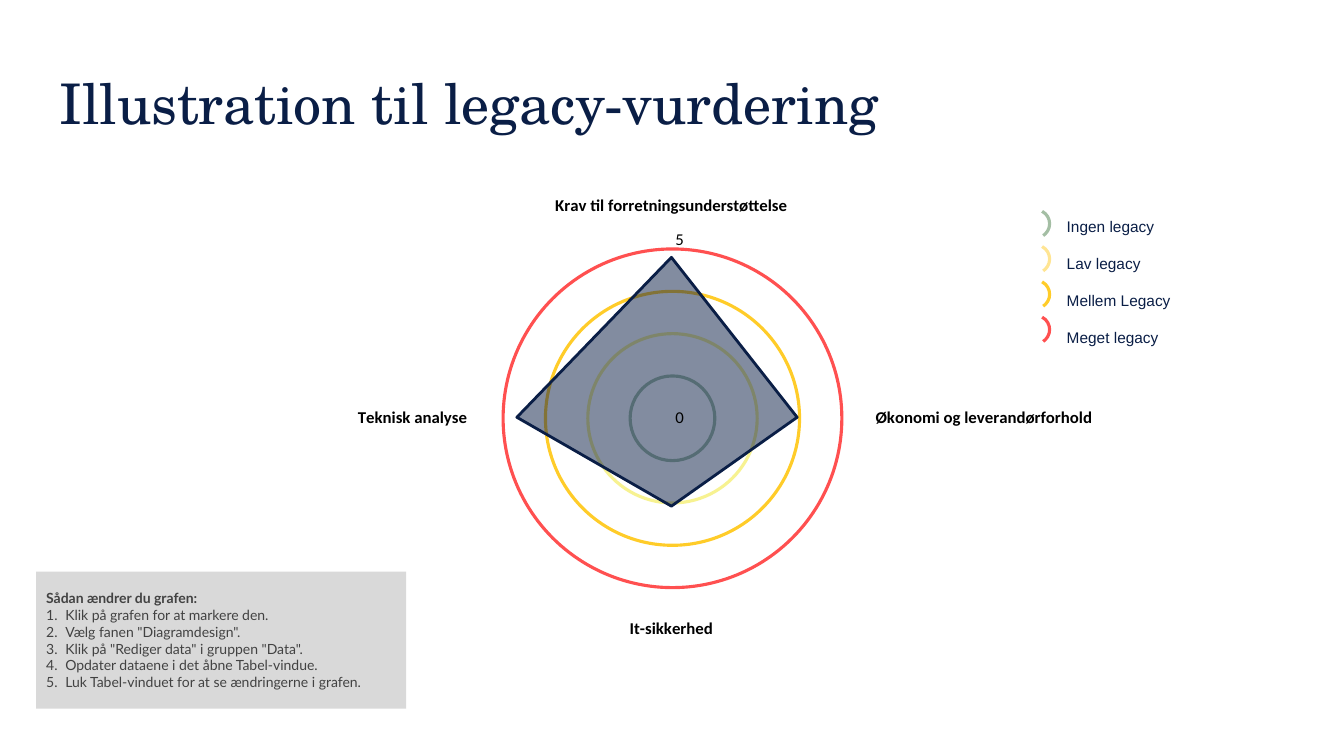
from dataclasses import dataclass

from lxml.etree import SubElement
from pptx import Presentation
from pptx.chart.data import CategoryChartData
from pptx.dml.color import RGBColor
from pptx.enum.chart import XL_CHART_TYPE, XL_TICK_MARK
from pptx.enum.shapes import MSO_SHAPE
from pptx.enum.text import MSO_ANCHOR, MSO_AUTO_SIZE, PP_ALIGN
from pptx.oxml import parse_xml
from pptx.oxml.ns import nsdecls, qn
from pptx.util import Inches, Pt

NAVY = RGBColor(0x0A, 0x1E, 0x46)
RED = RGBColor(0xFF, 0x50, 0x50)
AMBER = RGBColor(0xFF, 0xCC, 0x29)
SAND = RGBColor(0xFF, 0xE5, 0x93)
LEMON = RGBColor(0xF7, 0xF2, 0x91)
SAGE = RGBColor(0xA4, 0xBE, 0xA4)
SILVER = RGBColor(0xD9, 0xD9, 0xD9)
GRAY = RGBColor(0x42, 0x42, 0x42)
BLACK = RGBColor(0, 0, 0)
WHITE = RGBColor(0xFF, 0xFF, 0xFF)

MID_X, MID_Y = 6.67, 4.15
RING_STEP = 0.42  # radius added by each level


@dataclass
class Level:
    name: str
    ring: RGBColor
    arc: RGBColor


@dataclass
class Score:
    topic: str
    value: float


LEVELS = [
    Level("Ingen legacy", SAGE, SAGE),
    Level("Lav legacy", LEMON, SAND),
    Level("Mellem Legacy", AMBER, AMBER),
    Level("Meget legacy", RED, RED),
]
SCORES = [
    Score("Krav til forretningsunderstøttelse", 4.5),
    Score("Økonomi og leverandørforhold", 3.5),
    Score("It-sikkerhed", 2.5),
    Score("Teknisk analyse", 4.3),
]
STEPS = [
    "Klik på grafen for at markere den.",
    "Vælg fanen \"Diagramdesign\".",
    "Klik på \"Rediger data\" i gruppen \"Data\".",
    "Opdater dataene i det åbne Tabel-vindue.",
    "Luk Tabel-vinduet for at se ændringerne i grafen.",
]


def set_font(font, name: str, size: float, color: RGBColor, bold: bool = False) -> None:
    font.name, font.size, font.bold = name, Pt(size), bold
    font.color.rgb = color


def clear_inset(frame) -> None:
    frame.margin_left = frame.margin_right = 0
    frame.margin_top = frame.margin_bottom = 0
    frame.word_wrap = True


def add_title(slide) -> None:
    title = slide.shapes.title
    title.left, title.top = Inches(0.59), Inches(0.79)
    title.width, title.height = Inches(12.15), Inches(1.18)
    frame = title.text_frame
    clear_inset(frame)
    frame.auto_size = MSO_AUTO_SIZE.NONE
    frame.vertical_anchor = MSO_ANCHOR.TOP
    frame.text = "Illustration til legacy-vurdering"
    para = frame.paragraphs[0]
    para.alignment, para.line_spacing = PP_ALIGN.LEFT, 0.83
    set_font(para.font, "TeX Gyre Schola", 40, NAVY)


def add_rings(slide) -> None:
    group = slide.shapes.add_group_shape()
    for rank in range(len(LEVELS), 0, -1):
        radius = RING_STEP * rank
        ring = group.shapes.add_shape(
            MSO_SHAPE.FLOWCHART_CONNECTOR,
            Inches(MID_X - radius), Inches(MID_Y - radius),
            Inches(2 * radius), Inches(2 * radius))
        ring.shadow.inherit = False
        ring.fill.solid()
        ring.fill.fore_color.rgb = WHITE
        ring.line.color.rgb = LEVELS[rank - 1].ring
        ring.line.width = Pt(2.25)


def add_radar(slide) -> None:
    data = CategoryChartData()
    data.categories = [score.topic for score in SCORES]
    data.add_series("Series 1", [score.value for score in SCORES])
    chart = slide.shapes.add_chart(
        XL_CHART_TYPE.RADAR_FILLED, Inches(1.97), Inches(1.41),
        Inches(9.38), Inches(4.93), data).chart
    chart.has_legend = chart.has_title = False
    set_font(chart.font, "Calibri", 10, BLACK)

    # Axes
    topics, scale = chart.category_axis, chart.value_axis
    for axis in (topics, scale):
        axis.has_major_gridlines = False
        axis.major_tick_mark = axis.minor_tick_mark = XL_TICK_MARK.NONE
        set_font(axis.tick_labels.font, "Calibri", 12, BLACK, axis is topics)
    topics.format.line.color.rgb = SILVER
    topics.format.line.width = Pt(0.75)
    scale.format.line.fill.background()
    scale.minimum_scale, scale.maximum_scale, scale.major_unit = 0, 5, 5

    # Half-clear area
    area = chart.plots[0].series[0].format
    area.fill.solid()
    area.fill.fore_color.rgb = NAVY
    area.line.color.rgb = NAVY
    area.line.width = Pt(2)
    fill = area.fill._xPr.find(qn("a:solidFill"))
    SubElement(fill[0], qn("a:alpha"), val="51000")

    # Clear ground and fixed plot place
    root = chart._chartSpace
    plot = root.chart.plotArea
    clear = f'<c:spPr {nsdecls("c", "a")}><a:noFill/><a:ln><a:noFill/></a:ln></c:spPr>'
    root.chart.addnext(parse_xml(clear))
    plot.append(parse_xml(clear))
    for old in plot.findall(qn("c:layout")):
        plot.remove(old)
    layout = parse_xml(f'<c:layout {nsdecls("c")}><c:manualLayout/></c:layout>')
    plot.insert(0, layout)
    for tag, val in (("layoutTarget", "inner"), ("xMode", "edge"), ("yMode", "edge"),
                     ("x", "0.31"), ("y", "0.19"), ("w", "0.38"), ("h", "0.74")):
        SubElement(layout[0], qn(f"c:{tag}"), val=val)


def add_key(slide) -> None:
    box = slide.shapes.add_textbox(Inches(10.58), Inches(1.97), Inches(1.2), Inches(1.42))
    frame = box.text_frame
    clear_inset(frame)
    frame.auto_size = MSO_AUTO_SIZE.SHAPE_TO_FIT_TEXT
    frame.text = "\n".join(level.name for level in LEVELS)
    for para in frame.paragraphs:
        para.line_spacing = 2.0
        set_font(para.font, "Arial", 11, NAVY)
    for row, level in enumerate(LEVELS):
        arc = slide.shapes.add_shape(
            MSO_SHAPE.ARC, Inches(10.13), Inches(2.08 + 0.35 * row),
            Inches(0.28), Inches(0.28))
        arc.shadow.inherit = False
        arc.rotation = 45
        arc.adjustments[0], arc.adjustments[1] = 151.78, 7.2
        arc.fill.background()
        arc.line.color.rgb = level.arc
        arc.line.width = Pt(2.25)


def add_guide(slide) -> None:
    box = slide.shapes.add_shape(
        MSO_SHAPE.RECTANGLE, Inches(0.36), Inches(5.67), Inches(3.67), Inches(1.36))
    box.shadow.inherit = False
    box.fill.solid()
    box.fill.fore_color.rgb = SILVER
    box.line.fill.background()
    frame = box.text_frame
    frame.word_wrap = True
    frame.vertical_anchor = MSO_ANCHOR.MIDDLE
    frame.text = "\n".join(["Sådan ændrer du grafen:", *STEPS])
    for row, para in enumerate(frame.paragraphs):
        para.alignment = PP_ALIGN.LEFT
        set_font(para.font, "Lato", 10, GRAY, row == 0)
        if row:
            props = para._p.get_or_add_pPr()
            props.set("marL", str(Inches(0.19)))
            props.set("indent", str(-Inches(0.19)))
            props.insert(0, parse_xml(
                f'<a:buAutoNum {nsdecls("a")} type="arabicPeriod"/>'))


def main() -> None:
    deck = Presentation()
    deck.slide_width, deck.slide_height = Inches(13.33), Inches(7.5)
    slide = deck.slides.add_slide(deck.slide_layouts[5])
    add_title(slide)
    add_rings(slide)
    add_radar(slide)
    add_key(slide)
    add_guide(slide)
    deck.save("out.pptx")


if __name__ == "__main__":
    main()
